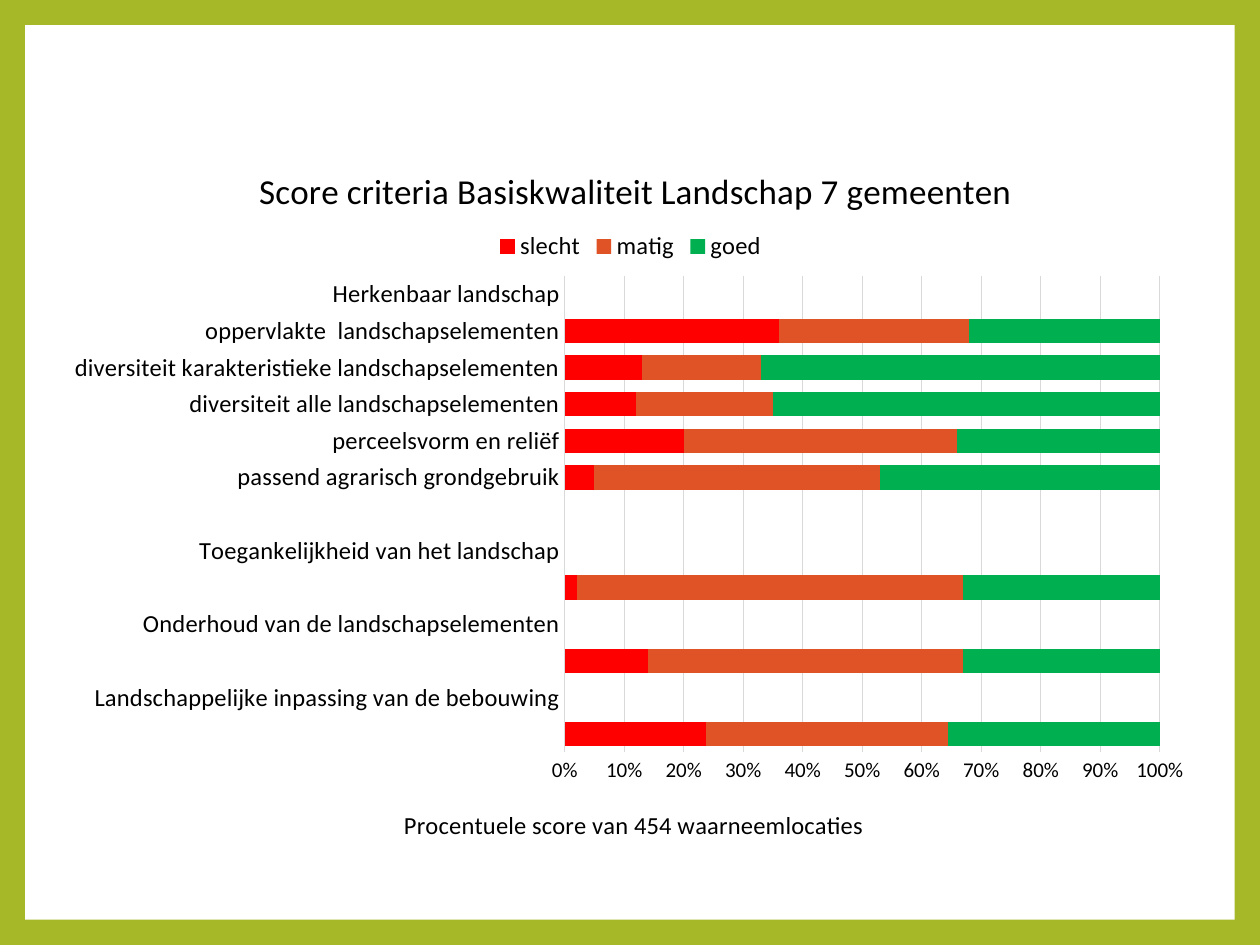
from lxml import etree
from pptx import Presentation
from pptx.chart.data import CategoryChartData
from pptx.dml.color import RGBColor
from pptx.enum.chart import XL_CHART_TYPE, XL_LEGEND_POSITION, XL_TICK_MARK
from pptx.enum.shapes import MSO_SHAPE
from pptx.oxml.ns import qn
from pptx.util import Inches, Pt

GREEN = RGBColor(0xA6, 0xB7, 0x27)
WHITE = RGBColor(0xFF, 0xFF, 0xFF)
BLACK = RGBColor(0, 0, 0)
GRID = RGBColor(0xD9, 0xD9, 0xD9)
FONT = "Calibri"

# Criteria from bottom to top: slecht, matig, goed; headings have no scores
SCORES = [
    ("", (24, 41, 36)),
    ("Landschappelijke inpassing van de bebouwing", None),
    ("", (14, 53, 33)),
    ("Onderhoud van de landschapselementen", None),
    ("", (2, 65, 33)),
    ("Toegankelijkheid van het landschap", None),
    ("", None),
    ("passend agrarisch grondgebruik", (5, 48, 47)),
    ("perceelsvorm en reliëf", (20, 46, 34)),
    ("diversiteit alle landschapselementen", (12, 23, 65)),
    ("diversiteit karakteristieke landschapselementen", (13, 20, 67)),
    ("oppervlakte  landschapselementen", (36, 32, 32)),
    ("Herkenbaar landschap", None),
]
RATINGS = {
    "slecht": RGBColor(0xFF, 0, 0),
    "matig": RGBColor(0xDF, 0x53, 0x27),
    "goed": RGBColor(0, 0xB0, 0x50),
}


def style_font(font, size):
    font.name = FONT
    font.size = Pt(size)
    font.bold = False
    font.color.rgb = BLACK


def set_title(owner, text, size):
    tf = owner.text_frame
    tf.text = text
    style_font(tf.paragraphs[0].runs[0].font, size)


def set_layout(element, after=None, inner=False, **fractions):
    """Place a chart part by fractions of the chart's width and height."""
    old = element.find(qn("c:layout"))
    if old is not None:
        element.remove(old)
    layout = etree.Element(qn("c:layout"))
    manual = etree.SubElement(layout, qn("c:manualLayout"))
    values = [("layoutTarget", "inner")] if inner else []
    values += [("xMode", "edge"), ("yMode", "edge"), *fractions.items()]
    for tag, value in values:
        etree.SubElement(manual, qn(f"c:{tag}")).set("val", str(value))
    if after is None:
        element.insert(0, layout)
    else:
        element.find(qn(after)).addnext(layout)


def add_frame(s, left, top, width, height):
    fill = s.background.fill
    fill.solid()
    fill.fore_color.rgb = GREEN
    panel = s.shapes.add_shape(MSO_SHAPE.RECTANGLE, left, top, width, height)
    panel.shadow.inherit = False
    panel.fill.solid()
    panel.fill.fore_color.rgb = WHITE
    panel.line.fill.background()


def add_score_chart(s, left, top, width, height):
    data = CategoryChartData()
    data.categories = [name for name, _ in SCORES]
    for i, rating in enumerate(RATINGS):
        data.add_series(rating, [row[i] if row else None for _, row in SCORES])
    chart = s.shapes.add_chart(
        XL_CHART_TYPE.BAR_STACKED_100, left, top, width, height, data).chart
    style_font(chart.font, 10)

    # Bars
    plot = chart.plots[0]
    plot.gap_width = 50
    plot.overlap = 100
    plot.vary_by_categories = False
    for series in plot.series:
        series.format.fill.solid()
        series.format.fill.fore_color.rgb = RATINGS[series.name]
    set_layout(chart._chartSpace.chart.plotArea, inner=True,
               x=0.443, y=0.204, w=0.515, h=0.649)

    # Title and legend
    set_title(chart.chart_title, "Score criteria Basiskwaliteit Landschap 7 gemeenten", 20)
    set_layout(chart.chart_title._element, "c:tx", x=0.173, y=0.046)
    chart.has_legend = True
    legend = chart.legend
    legend.position = XL_LEGEND_POSITION.TOP
    legend.include_in_layout = False
    style_font(legend.font, 14)

    # Axes
    for axis, size in ((chart.category_axis, 14), (chart.value_axis, 12)):
        axis.major_tick_mark = axis.minor_tick_mark = XL_TICK_MARK.NONE
        style_font(axis.tick_labels.font, size)
    cat_line = chart.category_axis.format.line
    cat_line.color.rgb = GRID
    cat_line.width = Pt(0.75)
    value_axis = chart.value_axis
    value_axis.format.line.fill.background()
    value_axis.maximum_scale = 1
    value_axis.major_unit = 0.1
    value_axis.tick_labels.number_format = "0%"
    value_axis.tick_labels.number_format_is_linked = False
    value_axis.has_major_gridlines = True
    grid_line = value_axis.major_gridlines.format.line
    grid_line.color.rgb = GRID
    grid_line.width = Pt(0.75)
    set_title(value_axis.axis_title, "Procentuele score van 454 waarneemlocaties", 14)
    set_layout(value_axis.axis_title._element, "c:tx", x=0.3, y=0.923)
    set_layout(legend._element, "c:legendPos", x=0.38, y=0.139, w=0.24, h=0.05)


def main():
    prs = Presentation()
    prs.slide_width, prs.slide_height = Inches(10), Inches(7.5)
    s = prs.slides.add_slide(prs.slide_layouts[6])
    add_frame(s, Inches(0.2), Inches(0.2), Inches(9.6), Inches(7.1))
    add_score_chart(s, Inches(0.42), Inches(1), Inches(9.17), Inches(5.83))
    prs.save("out.pptx")


if __name__ == "__main__":
    main()
